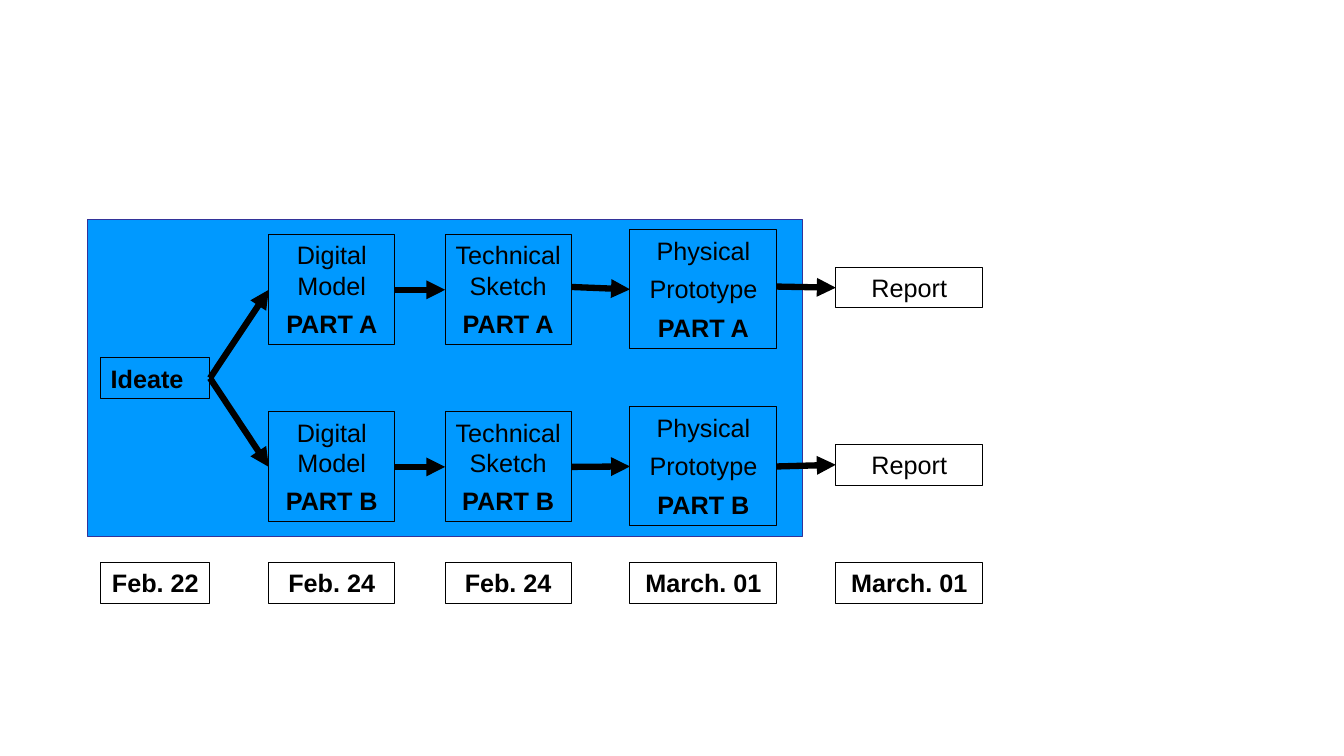
from lxml import etree
from pptx import Presentation
from pptx import util as u
from pptx.dml import color
from pptx.enum import shapes, text
from pptx.oxml import ns

Pt = u.Pt
BLACK = "000000"
COLUMNS = [(72, 78), (192, 90), (318, 90), (450, 105), (597, 105)]
IDEATE, DIGITAL, SKETCH, PROTOTYPE, REPORT = COLUMNS
DATES = ["Feb. 22", "Feb. 24", "Feb. 24", "March. 01", "March. 01"]
LABEL_HEIGHT = 29
ROW_STEP = 126.5
LEFT_SIDE, RIGHT_SIDE = 1, 3


def paint(target, value):
    target.rgb = color.RGBColor.from_string(value)


def add_rectangle(page, left, top, width, height, outline, fill=None):
    box = page.shapes.add_shape(
        shapes.MSO_SHAPE.RECTANGLE, Pt(left), Pt(top), Pt(width), Pt(height))
    box.shadow.inherit = False
    if fill:
        box.fill.solid()
        paint(box.fill.fore_color, fill)
    else:
        box.fill.background()
    paint(box.line.color, outline)
    box.line.width = Pt(0.75)
    return box


def add_box(page, column, top, height, lines, align=text.PP_ALIGN.CENTER):
    left, width = column
    box = add_rectangle(page, left, top, width, height, BLACK)
    frame = box.text_frame
    frame.word_wrap = True
    frame.auto_size = text.MSO_AUTO_SIZE.SHAPE_TO_FIT_TEXT
    frame.vertical_anchor = text.MSO_ANCHOR.TOP
    for index, (words, bold) in enumerate(lines):
        para = frame.add_paragraph() if index else frame.paragraphs[0]
        para.alignment = align
        para.space_before = Pt(6)
        span = para.add_run()
        span.text = words
        span.font.name = "Arial"
        span.font.size = Pt(18)
        span.font.bold = bold
        paint(span.font.color, BLACK)
    return box


def add_arrow(page, source, target, rise=0):
    start_x = source.left + source.width
    start_y = source.top + source.height // 2 - Pt(rise)
    arrow = page.shapes.add_connector(
        shapes.MSO_CONNECTOR.STRAIGHT, start_x, start_y,
        target.left, target.top + target.height // 2)
    if not rise:
        arrow.begin_connect(source, RIGHT_SIDE)
    arrow.end_connect(target, LEFT_SIDE)
    paint(arrow.line.color, BLACK)
    arrow.line.width = Pt(4.5)
    etree.SubElement(arrow.line._get_or_add_ln(), ns.qn("a:tailEnd"), type="triangle")
    etree.SubElement(arrow._element.spPr, ns.qn("a:effectLst"))


def add_track(page, part, offset):
    label = (part, True)
    return [
        add_box(page, DIGITAL, 167.7 + offset, 78.6, [("Digital Model", False), label]),
        add_box(page, SKETCH, 167.7 + offset, 78.6, [("Technical Sketch", False), label]),
        add_box(page, PROTOTYPE, 164.2 + offset, 85,
                [("Physical", False), ("Prototype", False), label]),
        add_box(page, REPORT, 191 + offset, LABEL_HEIGHT, [("Report", False)]),
    ]


def main():
    deck = Presentation()
    deck.slide_width, deck.slide_height = Pt(960), Pt(540)
    page = deck.slides.add_slide(deck.slide_layouts[6])

    add_rectangle(page, 62.5, 157, 511, 226, "333399", "0099FF")
    ideate = add_box(page, IDEATE, 255.6, LABEL_HEIGHT, [("Ideate", True)],
                     text.PP_ALIGN.LEFT)
    tracks = [(add_track(page, "PART A", 0), (0, 0, 2, 2)),
              (add_track(page, "PART B", ROW_STEP), (0, 0, 0, 0))]
    for track, rises in tracks:
        for source, target, rise in zip([ideate] + track, track, rises):
            add_arrow(page, source, target, rise)
    for column, date in zip(COLUMNS, DATES):
        add_box(page, column, 402, LABEL_HEIGHT, [(date, True)])

    deck.save("out.pptx")


if __name__ == "__main__":
    main()
